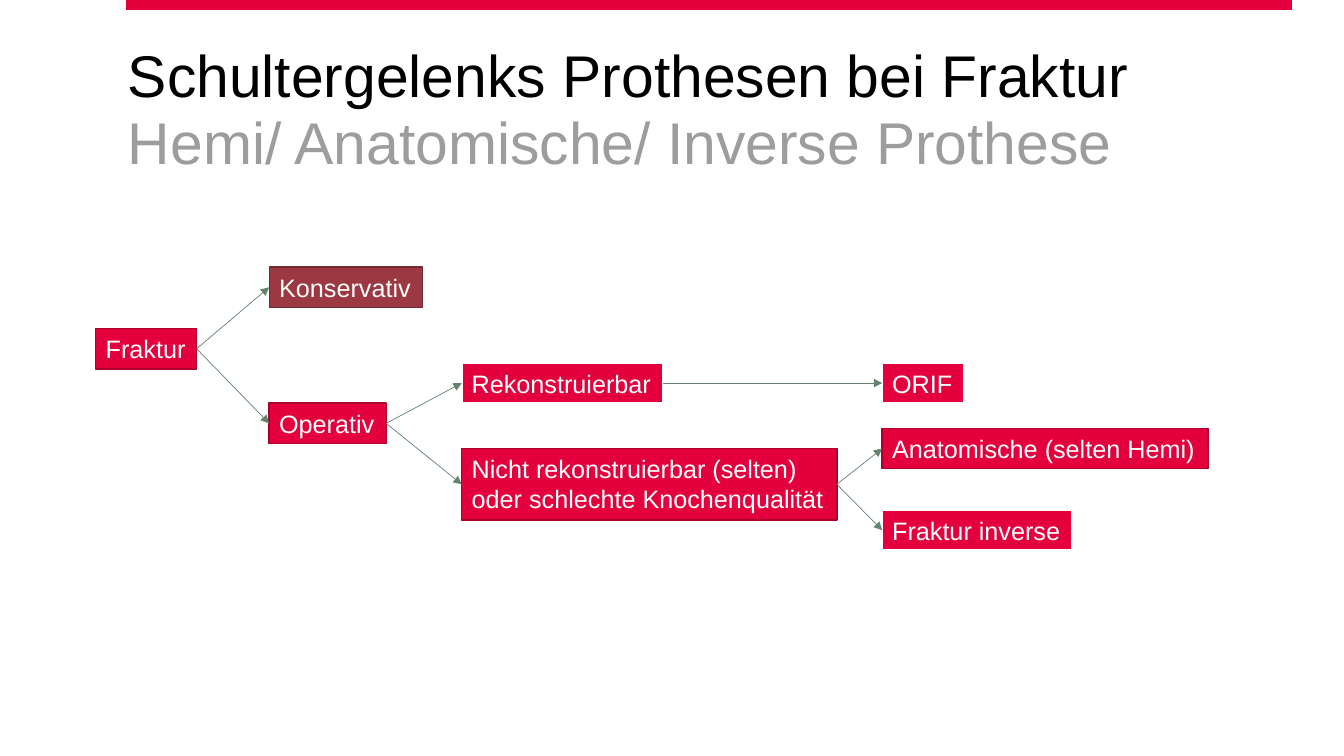
from lxml.etree import SubElement
from pptx import Presentation
from pptx.dml.color import RGBColor
from pptx.enum.shapes import MSO_CONNECTOR, MSO_SHAPE
from pptx.enum.text import MSO_ANCHOR, MSO_AUTO_SIZE, PP_ALIGN
from pptx.oxml.ns import qn
from pptx.util import Emu, Pt

EMU_PER_PX = 9144  # 100 px to the inch
FONT = "Arial"
COLORS = {
    "red": "E4003C",
    "dark red": "A9002C",
    "muted red": "9B3841",
    "muted edge": "732930",
    "green": "668271",
    "gray": "9D9D9C",
    "black": "000000",
    "white": "FFFFFF",
}
# Node styles: fill, outline, outline width in points
EDGED = ("red", "dark red", 1)
OUTLINED = ("red", "white", 1.5)
MUTED = ("muted red", "muted edge", 1)
LEFT_SITE, RIGHT_SITE = 1, 3

# Name: text, left, top, width, height, style
NODES = {
    "fracture": ("Fraktur", 95, 326, 100, 40, EDGED),
    "conservative": ("Konservativ", 267, 265, 152, 40, MUTED),
    "operative": ("Operativ", 267, 400, 116, 40, EDGED),
    "repairable": ("Rekonstruierbar", 458, 360, 200, 40, OUTLINED),
    "not repairable": (
        "Nicht rekonstruierbar (selten)\voder schlechte Knochenqualität",
        458, 445, 372, 71, EDGED),
    "fixation": ("ORIF", 875, 360, 81, 40, OUTLINED),
    "anatomic": ("Anatomische (selten Hemi)", 875, 425, 323, 40, EDGED),
    "inverse": ("Fraktur inverse", 875, 506, 188, 40, OUTLINED),
}
BRANCHES = [
    ("fracture", "conservative"),
    ("fracture", "operative"),
    ("operative", "repairable"),
    ("operative", "not repairable"),
    ("not repairable", "anatomic"),
    ("not repairable", "inverse"),
    ("repairable", "fixation"),
]


def px(length):
    return Emu(length * EMU_PER_PX)


def color(name):
    return RGBColor.from_string(COLORS[name])


def write(frame, text, size, color_name):
    frame.text = text
    paragraph = frame.paragraphs[0]
    paragraph.alignment = PP_ALIGN.LEFT
    for span in paragraph.runs:
        span.font.name = FONT
        span.font.size = Pt(size)
        span.font.color.rgb = color(color_name)
    return paragraph


def add_heading(page, text, top, height, color_name, anchor):
    box = page.shapes.add_textbox(px(117), px(top), px(1150), px(height))
    frame = box.text_frame
    frame.word_wrap = True
    frame.vertical_anchor = anchor
    frame.margin_top = px(10)
    frame.margin_bottom = px(5)
    return write(frame, text, 42, color_name)


def add_node(page, text, left, top, width, height, style):
    fill, edge, edge_width = style
    box = page.shapes.add_shape(
        MSO_SHAPE.RECTANGLE, px(left), px(top), px(width), px(height))
    box.shadow.inherit = False
    box.fill.solid()
    box.fill.fore_color.rgb = color(fill)
    box.line.color.rgb = color(edge)
    box.line.width = Pt(edge_width)
    frame = box.text_frame
    frame.word_wrap = False
    frame.auto_size = MSO_AUTO_SIZE.SHAPE_TO_FIT_TEXT
    frame.vertical_anchor = MSO_ANCHOR.TOP
    write(frame, text, 18, "white")
    return box


def add_line(page, start, end, color_name, width):
    line = page.shapes.add_connector(
        MSO_CONNECTOR.STRAIGHT, *map(px, start + end))
    line.line.color.rgb = color(color_name)
    line.line.width = Pt(width)
    SubElement(line._element.spPr, qn("a:effectLst"))
    return line


def add_branch(page, source, target):
    """Draw an arrow from the right of one node to the left of another."""
    arrow = add_line(page, (0, 0), (0, 0), "green", 0.5)
    arrow.begin_connect(source, RIGHT_SITE)
    arrow.end_connect(target, LEFT_SITE)
    SubElement(arrow.line._get_or_add_ln(), qn("a:tailEnd"), type="triangle")


def main():
    deck = Presentation()
    deck.slide_width, deck.slide_height = px(1333), px(750)
    page = deck.slides.add_slide(deck.slide_layouts[6])

    add_line(page, (125, 5), (1281, 5), "red", 7.5)
    add_heading(page, "Hemi/ Anatomische/ Inverse Prothese",
                95, 71, "gray", MSO_ANCHOR.TOP)
    title = add_heading(page, "Schultergelenks Prothesen bei Fraktur",
                        32, 82, "black", MSO_ANCHOR.BOTTOM)
    title.line_spacing = 0.9

    boxes = {name: add_node(page, *node) for name, node in NODES.items()}
    for source, target in BRANCHES:
        add_branch(page, boxes[source], boxes[target])

    deck.save("out.pptx")


if __name__ == "__main__":
    main()
